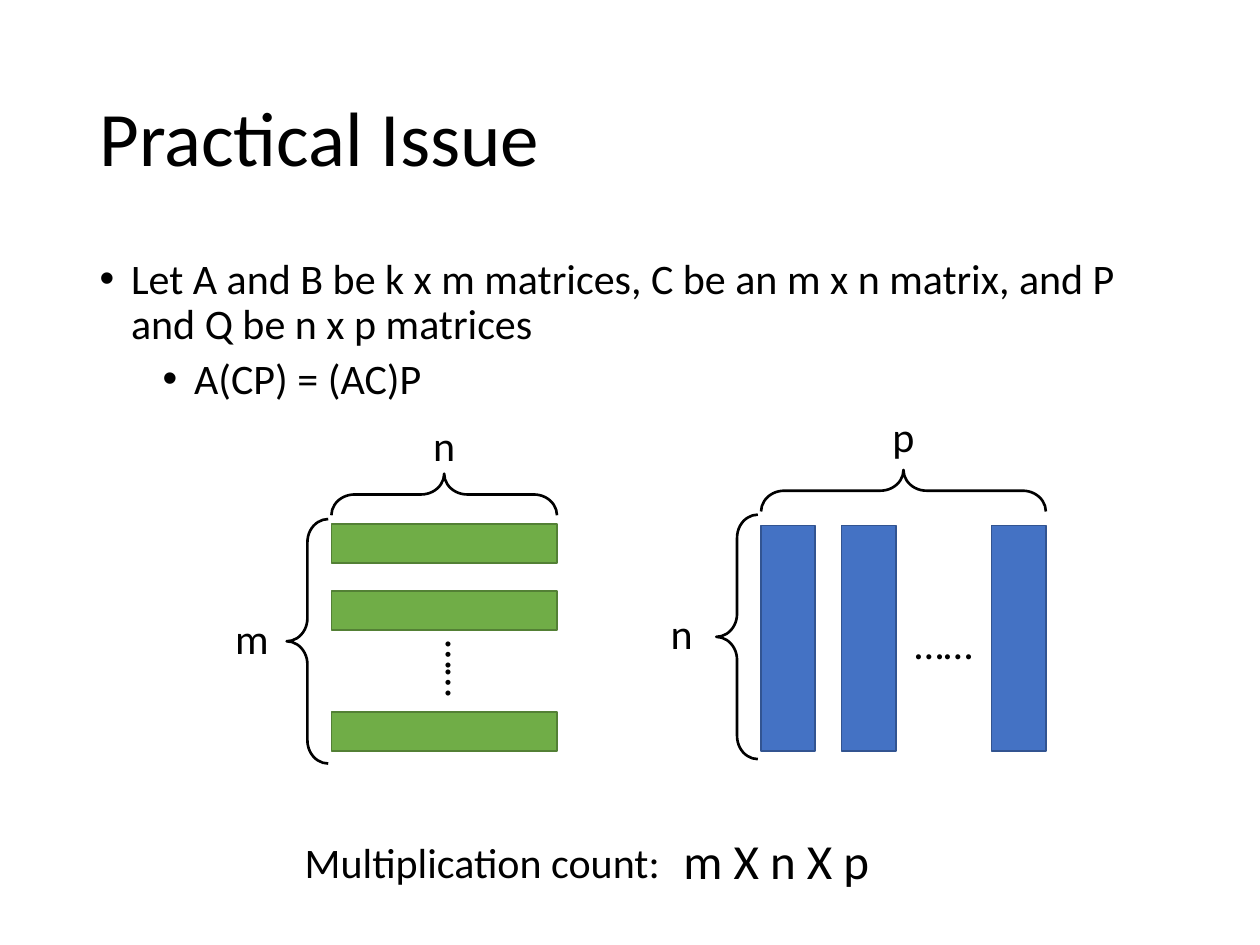
import pptx
import pptx.dml.color
import pptx.enum.shapes
import pptx.enum.text
import pptx.oxml
import pptx.util
from pptx.util import Inches

RGBColor = pptx.dml.color.RGBColor
MSO_SHAPE = pptx.enum.shapes.MSO_SHAPE
PP_ALIGN = pptx.enum.text.PP_ALIGN
MSO_ANCHOR = pptx.enum.text.MSO_ANCHOR

BLACK = RGBColor(0x00, 0x00, 0x00)
GREEN = RGBColor(0x70, 0xAD, 0x47)
DARK_GREEN = RGBColor(0x53, 0x80, 0x35)
BLUE = RGBColor(0x44, 0x72, 0xC4)
DARK_BLUE = RGBColor(0x32, 0x54, 0x91)
FONT = "Calibri"
BRACE_DEPTH = 0.33
LABEL_WIDTH, LABEL_HEIGHT = 0.98, 0.5
DOTS_WIDTH = 0.7


def place(shape, left, top, width, height):
    shape.left, shape.top = Inches(left), Inches(top)
    shape.width, shape.height = Inches(width), Inches(height)


def format_paragraph(paragraph, size, align=PP_ALIGN.LEFT):
    paragraph.alignment = align
    for run in paragraph.runs:
        run.font.name = FONT
        run.font.size = pptx.util.Pt(size)
        run.font.color.rgb = BLACK


def set_bullet(paragraph, margin, hanging):
    properties = paragraph._p.get_or_add_pPr()
    properties.set("marL", str(Inches(margin)))
    properties.set("indent", str(-Inches(hanging)))
    for tag, attribute, value in (("a:buFont", "typeface", "Arial"),
                                  ("a:buChar", "char", "•")):
        element = pptx.oxml.parse_xml(
            f'<{tag} xmlns:a="http://schemas.openxmlformats.org/drawingml/2006/main" '
            f'{attribute}="{value}"/>')
        properties.append(element)


def add_title(slide, text, left, top, width, height):
    title = slide.shapes.title
    place(title, left, top, width, height)
    frame = title.text_frame
    frame.text = text
    frame.auto_size = pptx.enum.text.MSO_AUTO_SIZE.NONE
    frame.vertical_anchor = MSO_ANCHOR.MIDDLE
    frame.paragraphs[0].line_spacing = 0.9
    format_paragraph(frame.paragraphs[0], 44)


def add_body(slide, items, left, top, width, height):
    """Fill the body with (text, level) items."""
    body = slide.placeholders[1]
    place(body, left, top, width, height)
    frame = body.text_frame
    frame.text = "\n".join(text for text, level in items)
    frame.auto_size = pptx.enum.text.MSO_AUTO_SIZE.NONE
    for paragraph, (text, level) in zip(frame.paragraphs, items):
        paragraph.level = level
        paragraph.line_spacing = 0.9
        paragraph.space_before = pptx.util.Pt(5 if level else 10)
        format_paragraph(paragraph, 24)
        set_bullet(paragraph, 0.25 + 0.5 * level, 0.25)


def add_text(slide, text, left, top, width, height, size=24, align=PP_ALIGN.CENTER):
    box = slide.shapes.add_textbox(Inches(left), Inches(top), Inches(width), Inches(height))
    box.text_frame.word_wrap = True
    box.text_frame.text = text
    format_paragraph(box.text_frame.paragraphs[0], size, align)
    return box


def add_bar(slide, left, top, width, height, fill, line):
    bar = slide.shapes.add_shape(MSO_SHAPE.RECTANGLE, Inches(left), Inches(top),
                                 Inches(width), Inches(height))
    bar.shadow.inherit = False
    bar.fill.solid()
    bar.fill.fore_color.rgb = fill
    bar.line.color.rgb = line
    bar.line.width = pptx.util.Pt(1)


def add_brace(slide, center_x, center_y, length, rotation=0):
    brace = slide.shapes.add_shape(
        MSO_SHAPE.LEFT_BRACE, Inches(center_x - BRACE_DEPTH / 2),
        Inches(center_y - length / 2), Inches(BRACE_DEPTH), Inches(length))
    brace.adjustments[0] = 0.558
    brace.rotation = rotation
    brace.shadow.inherit = False
    brace.fill.background()
    brace.line.color.rgb = BLACK
    brace.line.width = pptx.util.Pt(1.5)


def add_dimensions(slide, left, top, width, height, rows, columns, raised=0):
    """Add labelled braces to the left of and above a matrix box."""
    middle_x = left + width / 2
    middle_y = top + height / 2 + 0.03 - raised
    add_brace(slide, left - 0.19, middle_y, 1.94)
    add_brace(slide, middle_x, top - 0.235 - raised, width, rotation=90)
    add_text(slide, rows, left - 1.12, middle_y - 0.28, LABEL_WIDTH, LABEL_HEIGHT)
    add_text(slide, columns, middle_x - LABEL_WIDTH / 2, top - 0.88 - 2 * raised,
             LABEL_WIDTH, LABEL_HEIGHT)


def add_row_matrix(slide, left, top, width, height):
    bar_height = 0.31
    for offset in (0, 0.53, height - bar_height):
        add_bar(slide, left, top + offset, width, bar_height, GREEN, DARK_GREEN)
    dots = add_text(slide, "……", left + 0.69, top + height / 2, DOTS_WIDTH, LABEL_HEIGHT)
    dots.rotation = 90
    add_dimensions(slide, left, top, width, height, "m", "n")


def add_column_matrix(slide, left, top, width, height):
    bar_width = 0.43
    for offset in (0, 0.64, width - bar_width):
        add_bar(slide, left + offset, top, bar_width, height, BLUE, DARK_BLUE)
    add_text(slide, "……", left + 1.1, top + 0.68, DOTS_WIDTH, LABEL_HEIGHT)
    add_dimensions(slide, left, top, width, height, "n", "p", raised=0.04)


def add_count(slide, left, top):
    add_text(slide, "Multiplication count:", left, top + 0.05, 3.21, 0.5,
             align=PP_ALIGN.LEFT)
    add_text(slide, "m X n X p", left + 2.58, top, 2.52, 0.57, size=28)


def main():
    presentation = pptx.Presentation()
    presentation.slide_width, presentation.slide_height = Inches(10), Inches(7.5)
    slide = presentation.slides.add_slide(presentation.slide_layouts[1])
    add_title(slide, "Practical Issue", 0.69, 0.4, 8.62, 1.45)
    add_body(slide, [
        ("Let A and B be k x m matrices, C be an m x n matrix, and P and Q be n x p matrices", 0),
        ("A(CP) = (AC)P", 1),
    ], 0.69, 2, 8.62, 4.76)
    add_row_matrix(slide, 2.63, 4.16, 1.79, 1.8)
    add_column_matrix(slide, 6.04, 4.17, 2.26, 1.79)
    add_count(slide, 2.32, 6.54)
    presentation.save("out.pptx")


if __name__ == "__main__":
    main()
